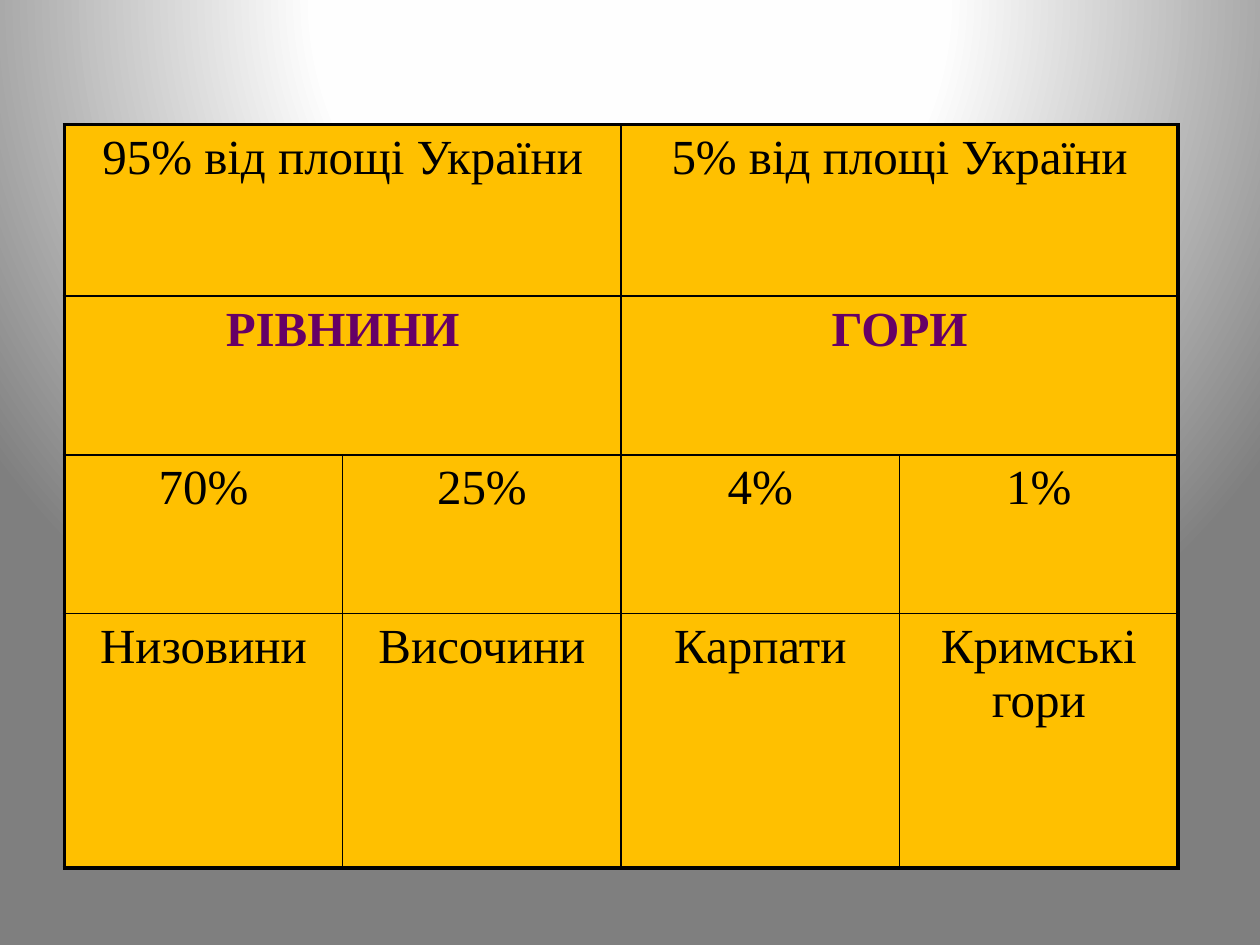
from lxml import etree
from pptx import Presentation
from pptx.dml.color import RGBColor
from pptx.enum.text import PP_ALIGN
from pptx.oxml.ns import qn
from pptx.util import Inches, Pt

CENTER = PP_ALIGN.CENTER
BLACK = RGBColor(0x00, 0x00, 0x00)
PURPLE = RGBColor(0x66, 0x00, 0x66)
GOLD = RGBColor(0xFF, 0xC0, 0x00)
WHITE = RGBColor(0xFF, 0xFF, 0xFF)
NEAR_WHITE = RGBColor(0xFE, 0xFE, 0xFE)
GRAY = RGBColor(0x7F, 0x7F, 0x7F)

WIDTH, HEIGHT = Inches(10), Inches(7.5)
LEFT, TOP = Inches(0.51), Inches(0.99)
COLUMN_WIDTH = Inches(2.21)
ROW_HEIGHTS = [Inches(1.36), Inches(1.26), Inches(1.26), Inches(2.02)]
COLUMNS = 4
OUTER, INNER = Pt(2.25), Pt(1)

BODY = {"name": "Times New Roman", "size": Pt(28), "bold": False}
HEADING = {**BODY, "bold": True}
ROWS = [
    (["95% від площі України", "5% від площі України"], BODY, BLACK),
    (["РІВНИНИ", "ГОРИ"], HEADING, PURPLE),
    (["70%", "25%", "4%", "1%"], BODY, BLACK),
    (["Низовини", "Височини", "Карпати", "Кримські гори"], BODY, BLACK),
]
BACKDROP = [(0, WHITE), (40, NEAR_WHITE), (100, GRAY)]
FOCUS = {"l": "50000", "t": "-80000", "r": "50000", "b": "180000"}


def add_node(parent, tag, **values):
    return etree.SubElement(parent, qn(tag), values)


def paint_backdrop(page):
    page.background.fill.gradient()
    gradient = page.element.find(".//" + qn("a:gradFill"))
    for child in list(gradient):
        gradient.remove(child)
    stops = add_node(gradient, "a:gsLst")
    for percent, color in BACKDROP:
        stop = add_node(stops, "a:gs", pos=str(percent * 1000))
        add_node(stop, "a:srgbClr", val=str(color))
    circle = add_node(gradient, "a:path", path="circle")
    add_node(circle, "a:fillToRect", **FOCUS)


def draw_borders(cell, row, column, span):
    outer_sides = {
        "a:lnL": column == 0,
        "a:lnR": column + span == COLUMNS,
        "a:lnT": row == 0,
        "a:lnB": row == len(ROWS) - 1,
    }
    properties = cell._tc.get_or_add_tcPr()
    for tag, is_outer in outer_sides.items():
        line = add_node(properties, tag, w=str(OUTER if is_outer else INNER))
        fill = add_node(line, "a:solidFill")
        add_node(fill, "a:srgbClr", val=str(BLACK))


def write_text(cell, text, style, color):
    para = cell.text_frame.paragraphs[0]
    para.alignment = CENTER
    before = add_node(para._p.get_or_add_pPr(), "a:spcBef")
    add_node(before, "a:spcPct", val="20000")
    span = para.add_run()
    span.text = text
    for name, value in style.items():
        setattr(span.font, name, value)
    span.font.color.rgb = color


def add_relief_table(page):
    frame = page.shapes.add_table(
        len(ROWS), COLUMNS, LEFT, TOP, COLUMN_WIDTH * COLUMNS, sum(ROW_HEIGHTS)
    )
    table = frame.table
    table.first_row = table.horz_banding = False
    for column in table.columns:
        column.width = COLUMN_WIDTH
    for row, (texts, style, color) in enumerate(ROWS):
        table.rows[row].height = ROW_HEIGHTS[row]
        span = COLUMNS // len(texts)
        for index, text in enumerate(texts):
            column = index * span
            cell = table.cell(row, column)
            if span > 1:
                cell.merge(table.cell(row, column + span - 1))
            draw_borders(cell, row, column, span)
            cell.fill.solid()
            cell.fill.fore_color.rgb = GOLD
            write_text(cell, text, style, color)


def main():
    deck = Presentation()
    deck.slide_width, deck.slide_height = WIDTH, HEIGHT
    page = deck.slides.add_slide(deck.slide_layouts[6])
    paint_backdrop(page)
    add_relief_table(page)
    deck.save("out.pptx")


if __name__ == "__main__":
    main()
